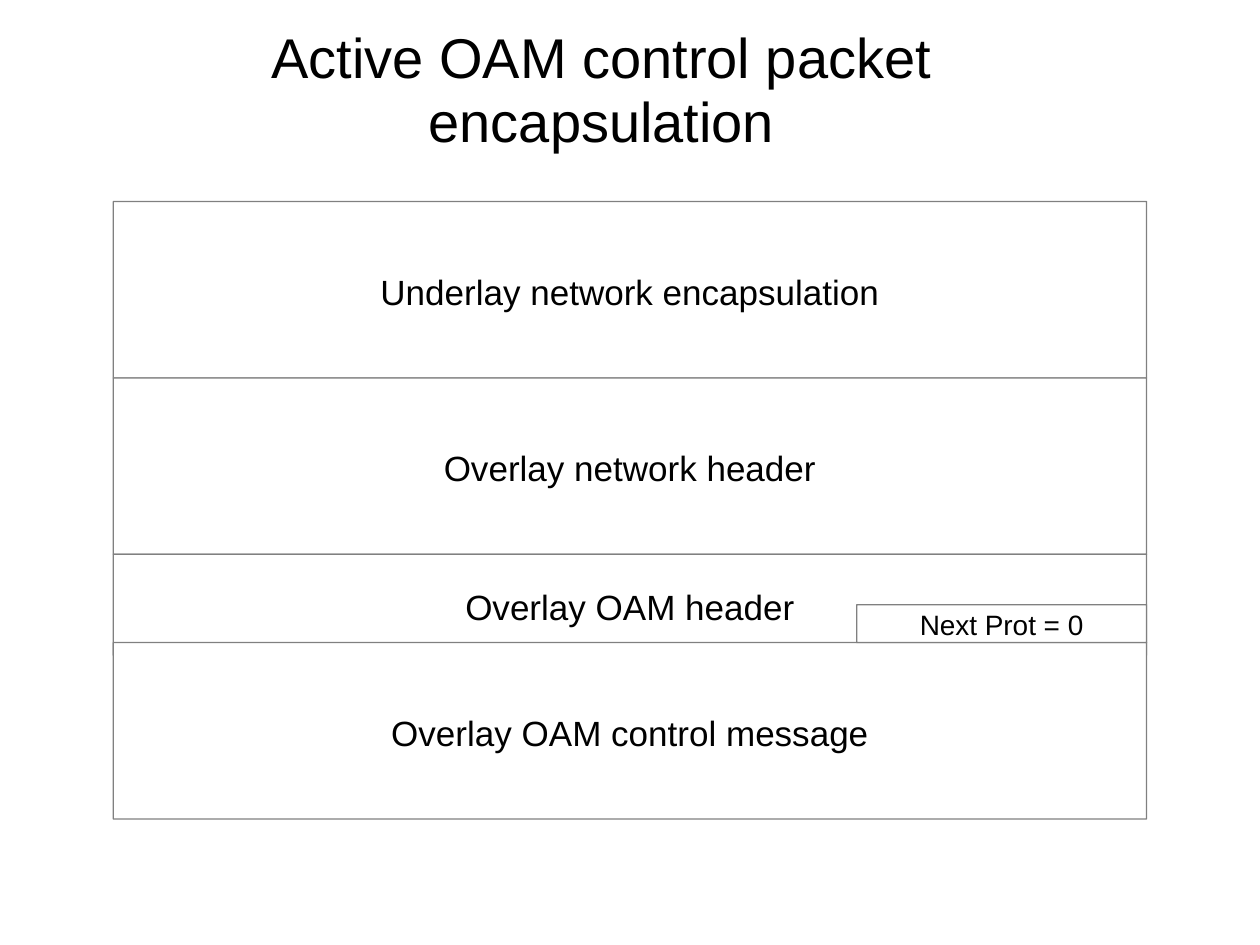
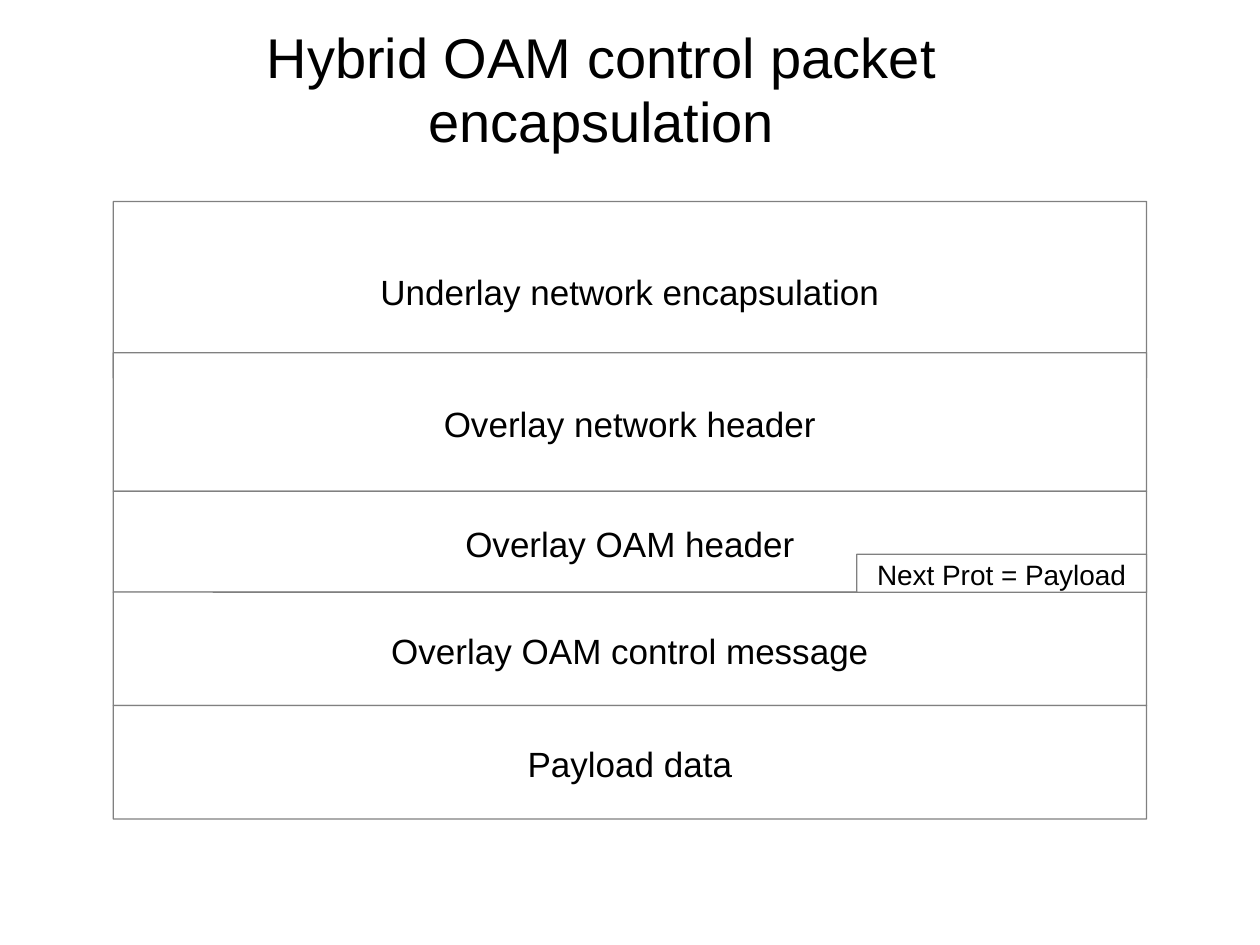
from typing import NamedTuple

from pptx import Presentation
from pptx.dml.color import RGBColor
from pptx.enum.shapes import MSO_SHAPE as Kind
from pptx.enum.text import MSO_ANCHOR as Anchor, PP_ALIGN as Align
from pptx.util import Pt

# Shared look
FONT = "Arial"
INK, PAPER, EDGE = "000000", "FFFFFF", "808080"
LEFT, WIDE = 64.8, 590.4
TAG_WIDE, TAG_HIGH = 165.6, 21.6
ROUND = 0.1  # corner radius


class Layer(NamedTuple):
    text: str
    top: float
    high: float


class Page(NamedTuple):
    title: str
    layers: list[Layer]
    tag: str
    floor: float  # bottom edge of the tag


PAGES = [
    Page("Active OAM control packet encapsulation", [
        Layer("Underlay network encapsulation", 115.2, 100.8),
        Layer("Overlay network header", 216, 100.8),
        Layer("Overlay OAM header", 316.8, 57.6),
        Layer("Overlay OAM control message", 367.2, 100.8),
    ], "Next Prot = 0", 367.2),
    Page("Hybrid OAM control packet encapsulation", [
        Layer("Underlay network encapsulation", 115.2, 100.8),
        Layer("Overlay network header", 201.6, 79.2),
        Layer("Overlay OAM header", 280.8, 57.6),
        Layer("Overlay OAM control message", 338.4, 64.8),
        Layer("Payload data", 403.2, 64.8),
    ], "Next Prot = Payload", 338.4),
]


def color(code: str) -> RGBColor:
    return RGBColor.from_string(code)


def write(shape, text: str, *, size: float, inset: float = 3.6,
          anchor=Anchor.MIDDLE, space: float = 1.0) -> None:
    """Put centred text into a shape."""
    frame = shape.text_frame
    frame.word_wrap = True
    frame.vertical_anchor = anchor
    frame.margin_left = frame.margin_right = Pt(7.2)
    frame.margin_top, frame.margin_bottom = Pt(inset), Pt(3.6)
    para = frame.paragraphs[0]
    para.alignment = Align.CENTER
    para.line_spacing = space
    run = para.add_run()
    run.text = text
    run.font.name, run.font.size = FONT, Pt(size)
    run.font.color.rgb = color(INK)


def add_box(slide, left: float, top: float, wide: float, high: float):
    """Draw one white, thinly outlined box."""
    box = slide.shapes.add_shape(
        Kind.ROUNDED_RECTANGLE, Pt(left), Pt(top), Pt(wide), Pt(high))
    box.adjustments[0] = ROUND / high
    box.shadow.inherit = False
    box.fill.solid()
    box.fill.fore_color.rgb = color(PAPER)
    box.line.color.rgb = color(EDGE)
    box.line.width = Pt(0.75)
    return box


def add_page(deck, page: Page) -> None:
    slide = deck.slides.add_slide(deck.slide_layouts[6])

    # Title
    head = slide.shapes.add_textbox(Pt(49.68), Pt(12.24), Pt(588.24), Pt(59.76))
    write(head, page.title, size=32, anchor=Anchor.TOP, space=0.95)

    # Packet layers
    for layer in page.layers:
        box = add_box(slide, LEFT, layer.top, WIDE, layer.high)
        write(box, layer.text, size=20, inset=5.04)

    # Next protocol tag, flush right in the OAM header
    tag = add_box(slide, LEFT + WIDE - TAG_WIDE, page.floor - TAG_HIGH,
                  TAG_WIDE, TAG_HIGH)
    write(tag, page.tag, size=16, inset=4.32)


def main() -> None:
    deck = Presentation()
    deck.slide_width, deck.slide_height = Pt(720), Pt(540)
    for page in PAGES:
        add_page(deck, page)
    deck.save("out.pptx")


if __name__ == "__main__":
    main()
